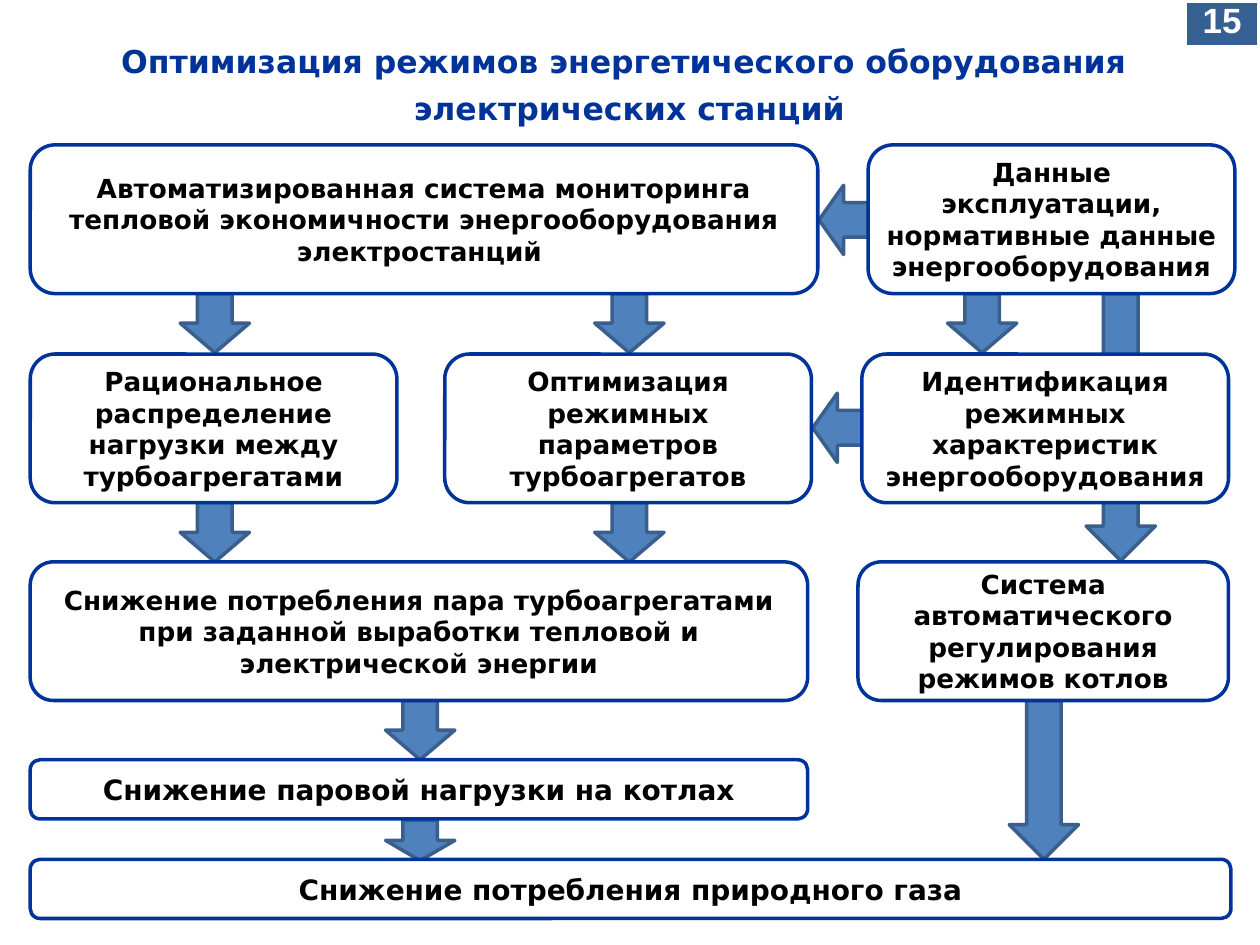
"""Builds the flowchart slide on optimising power plant equipment modes."""
from pptx import Presentation
from pptx.dml.color import RGBColor
from pptx.enum.shapes import MSO_SHAPE as Shape
from pptx.enum.text import MSO_ANCHOR as Anchor, MSO_AUTO_SIZE as AutoSize, PP_ALIGN as Align
from pptx.util import Inches, Pt

NAVY = RGBColor(0x00, 0x33, 0x99)
BLUE = RGBColor(0x4F, 0x81, 0xBD)
STEEL = RGBColor(0x3A, 0x5F, 0x8C)
BADGE = RGBColor(0x37, 0x60, 0x92)
WHITE = RGBColor(0xFF, 0xFF, 0xFF)
BLACK = RGBColor(0x00, 0x00, 0x00)
FONT = "DejaVu Sans"

deck = Presentation()
deck.slide_width, deck.slide_height = Inches(10), Inches(7.5)
page = deck.slides.add_slide(deck.slide_layouts[5])


def add_shape(kind, left, top, width, height, fill, line, weight=2):
    shape = page.shapes.add_shape(kind, Inches(left), Inches(top), Inches(width), Inches(height))
    shape.shadow.inherit = False
    shape.fill.solid()
    shape.fill.fore_color.rgb = fill
    shape.line.color.rgb = line
    shape.line.width = Pt(weight)
    return shape


def write(shape, text, size, color, font=FONT, anchor=Anchor.MIDDLE):
    frame = shape.text_frame
    frame.word_wrap = True
    frame.auto_size = AutoSize.NONE
    frame.vertical_anchor = anchor
    para = frame.paragraphs[0]
    para.text = text
    para.alignment = Align.CENTER
    for span in para.runs:
        span.font.name = font
        span.font.size = Pt(size)
        span.font.bold = True
        span.font.color.rgb = color
    return para


title = page.shapes.title
title.left, title.top, title.width, title.height = (Inches(n) for n in (0.27, 0.21, 9.45, 0.79))
heading = "Оптимизация режимов энергетического оборудования \vэлектрических станций"
write(title, heading, 18, NAVY, anchor=Anchor.TOP).line_spacing = Pt(27)

badge = add_shape(Shape.RECTANGLE, 9.41, 0.01, 0.58, 0.36, BADGE, WHITE, 1.5)
write(badge, "15", 20, WHITE, "Arial").line_spacing = 0.8

ARROW_WIDTH = 0.55
down_arrows = [
    (8.62, 2.33, 2.12),
    (1.43, 2.33, 0.47), (4.72, 2.33, 0.47), (7.52, 2.33, 0.47),
    (1.43, 3.99, 0.47), (4.72, 3.99, 0.47),
    (3.06, 5.56, 0.47), (8.01, 5.56, 1.26),
    (3.06, 6.51, 0.32),
]
for left, top, height in down_arrows:
    add_shape(Shape.DOWN_ARROW, left, top, ARROW_WIDTH, height, BLUE, STEEL)

for left, top in [(6.42, 1.55), (6.37, 3.2)]:
    arrow = add_shape(Shape.DOWN_ARROW, left, top, ARROW_WIDTH, 0.39, BLUE, STEEL)
    arrow.rotation = 90

WIDE, NARROW = 0.1, 0.04
boxes = [
    (0.24, 1.15, 6.25, 1.18, 15, WIDE,
     "Автоматизированная система мониторинга тепловой экономичности "
     "энергооборудования электростанций "),
    (6.89, 1.15, 2.91, 1.18, 15, NARROW,
     "Данные эксплуатации, нормативные данные энергооборудования"),
    (0.24, 2.81, 2.91, 1.18, 15, WIDE,
     "Рациональное распределение нагрузки между турбоагрегатами"),
    (3.53, 2.81, 2.91, 1.18, 15, WIDE,
     "Оптимизация режимных параметров турбоагрегатов"),
    (6.84, 2.81, 2.91, 1.18, 15, NARROW,
     "Идентификация режимных характеристик энергооборудования"),
    (0.24, 4.46, 6.17, 1.1, 15, WIDE,
     "Снижение потребления пара турбоагрегатами при заданной выработки "
     "тепловой и электрической энергии"),
    (6.81, 4.46, 2.94, 1.1, 15, WIDE,
     "Система автоматического регулирования режимов котлов"),
    (0.24, 6.03, 6.17, 0.47, 16, WIDE, "Снижение паровой нагрузки на котлах"),
    (0.24, 6.82, 9.53, 0.47, 16, WIDE, "Снижение потребления природного газа"),
]
for left, top, width, height, size, margin, text in boxes:
    box = add_shape(Shape.ROUNDED_RECTANGLE, left, top, width, height, WHITE, NAVY)
    box.text_frame.margin_left = box.text_frame.margin_right = Inches(margin)
    write(box, text, size, BLACK)

deck.save("out.pptx")
